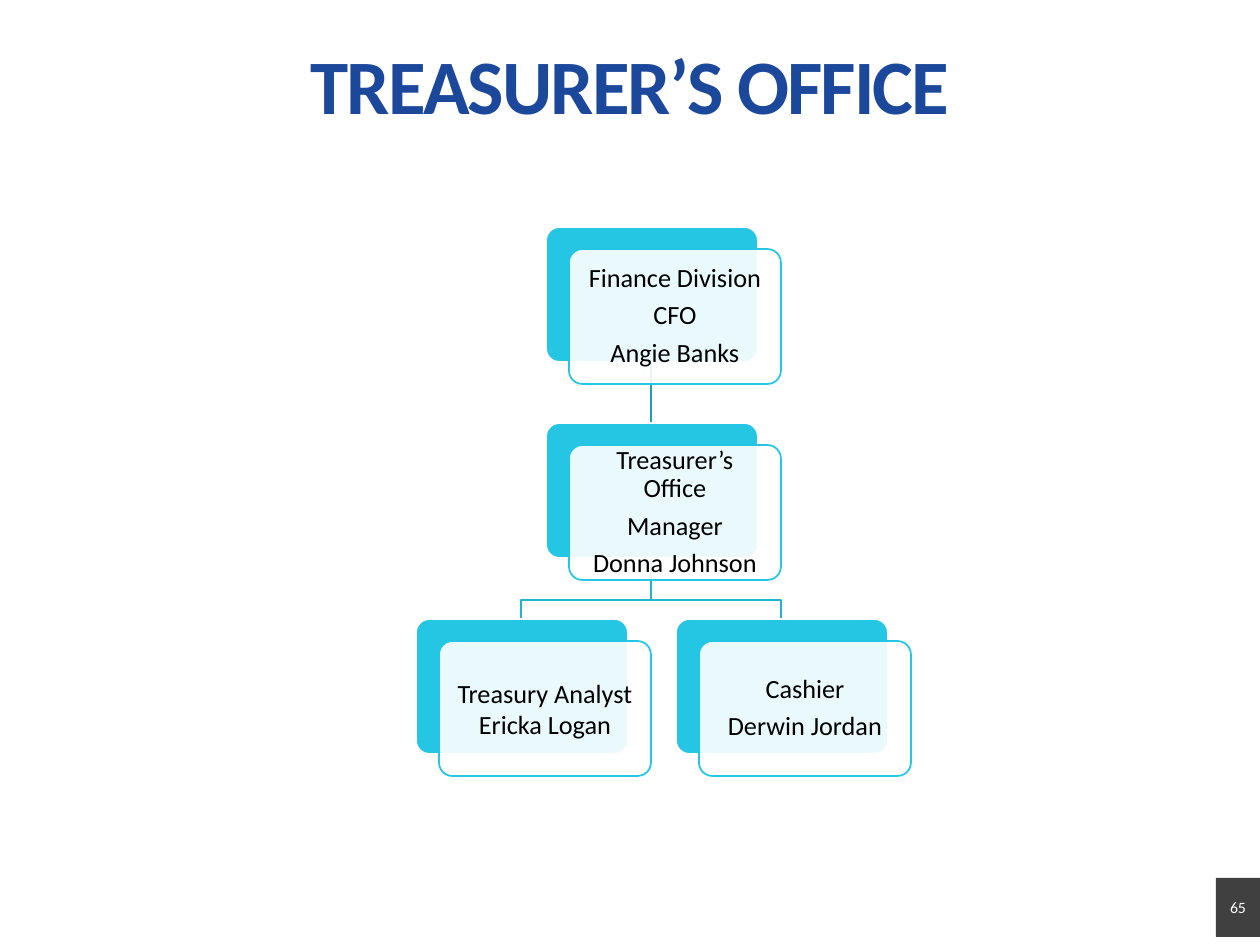
import pptx
import pptx.util
import pptx.dml.color
import pptx.enum.shapes
import pptx.enum.text
import pptx.oxml
import pptx.oxml.ns

SCALE = 914400 / 126
COLORS = {
    "title": "1B489B", "card": "25C6E3", "white": "FFFFFF", "text": "000000",
    "branch": "22B4CE", "stem": "1E9FB6", "badge": "404040",
}
FONT = "Calibri"
SHAPE = pptx.enum.shapes.MSO_SHAPE
ANCHOR = pptx.enum.text.MSO_ANCHOR
CENTER = pptx.enum.text.PP_ALIGN.CENTER

WIDTH, HEIGHT = 212, 135    # one card
DX, DY = 23, 22             # shift of the front panel
TOP, STEP = 227, 196        # first row and row pitch
MID, HALF = 546, 130        # left of the middle column, half a column pitch


def px(*values):
    return [pptx.util.Emu(round(value * SCALE)) for value in values]


def rgb(name):
    return pptx.dml.color.RGBColor.from_string(COLORS[name])


class Chart:
    """Style and current slide of the organisation chart."""

    def __init__(self, slide):
        self.slide = slide
        self.shapes = slide.shapes

    def text(self, frame, lines, size, color, pad, spread=None, after=0):
        frame.word_wrap = True
        frame.auto_size = pptx.enum.text.MSO_AUTO_SIZE.NONE
        frame.margin_left, frame.margin_top, frame.margin_right, frame.margin_bottom = px(*pad)
        for i, line in enumerate(lines):
            para = frame.add_paragraph() if i else frame.paragraphs[0]
            para.alignment = CENTER
            para.space_before = pptx.util.Pt(0)
            para.space_after = pptx.util.Pt(after)
            para.line_spacing = spread
            run = para.add_run()
            run.text = line
            run.font.name = FONT
            run.font.size = pptx.util.Pt(size)
            run.font.color.rgb = rgb(color)

    def title(self, text):
        title = self.shapes.title
        title.left, title.top, title.width, title.height = px(0, 43, 1260, 62)
        frame = title.text_frame
        frame.vertical_anchor = ANCHOR.TOP
        self.text(frame, [text], 44, "title", (9, 5, 9, 5), 0.9)
        font = frame.paragraphs[0].runs[0].font
        font.bold = True
        font._element.set("spc", "-110")

    def box(self, kind, place, fill, line=None):
        box = self.shapes.add_shape(kind, *px(*place))
        box.shadow.inherit = False
        box.fill.solid()
        box.fill.fore_color.rgb = rgb(fill)
        if line:
            box.line.color.rgb = rgb(line)
            box.line.width = pptx.util.Pt(1)
        else:
            box.line.fill.background()
        box.text_frame.vertical_anchor = ANCHOR.MIDDLE
        return box

    def card(self, x, y, lines, spread=0.9, after=5.25):
        """Solid back panel with a translucent front panel that holds the text."""
        back = self.box(SHAPE.ROUNDED_RECTANGLE, (x, y, WIDTH, HEIGHT), "card", "white")
        front = self.box(SHAPE.ROUNDED_RECTANGLE, (x + DX, y + DY, WIDTH, HEIGHT),
                         "white", "card")
        back.adjustments[0] = front.adjustments[0] = 0.1
        tint = front._element.spPr.find(pptx.oxml.ns.qn("a:solidFill"))[0]
        tint.append(pptx.oxml.parse_xml(
            '<a:alpha %s val="90000"/>' % pptx.oxml.ns.nsdecls("a")))
        self.text(front.text_frame, lines, 15, "text", (11, 11, 11, 11), spread, after)

    def stem(self, x, start, end):
        line = self.shapes.add_connector(
            pptx.enum.shapes.MSO_CONNECTOR.STRAIGHT, *px(x, start, x, end))
        line.line.color.rgb = rgb("stem")
        line.line.width = pptx.util.Pt(1)
        line._element.spPr.append(pptx.oxml.parse_xml(
            "<a:effectLst %s/>" % pptx.oxml.ns.nsdecls("a")))

    def branch(self, start, bend, end):
        """Line that goes down, across and down again."""
        (x, y), (far, low) = start, end
        route = self.shapes.build_freeform(*px(x, y))
        route.add_line_segments([px(x, bend), px(far, bend), px(far, low)], close=False)
        line = route.convert_to_shape()
        line.shadow.inherit = False
        line.fill.background()
        line.line.color.rgb = rgb("branch")
        line.line.width = pptx.util.Pt(1)

    def badge(self, text):
        box = self.box(SHAPE.RECTANGLE, (1216, 878, 44, 59), "badge")
        self.text(box.text_frame, [text], 9, "white", (0, 0, 0, 0))


def main():
    deck = pptx.Presentation()
    deck.slide_width, deck.slide_height = px(1260, 945)
    chart = Chart(deck.slides.add_slide(deck.slide_layouts[5]))
    chart.title("TREASURER’S OFFICE")

    rows = [TOP + STEP * i for i in range(3)]
    axis = MID + WIDTH // 2 - 1
    for side in (1, -1):
        chart.branch((axis, rows[1] + HEIGHT), 600, (axis + side * HALF, rows[2]))
    chart.stem(axis, rows[0] + HEIGHT, rows[1])

    chart.card(MID, rows[0], ["Finance Division", "CFO", "Angie Banks"])
    chart.card(MID, rows[1], ["Treasurer’s Office", "Manager", "Donna Johnson"])
    chart.card(MID - HALF, rows[2], ["Treasury Analyst", "Ericka Logan"], 1.0, 0)
    chart.card(MID + HALF, rows[2], ["Cashier", "Derwin Jordan"])
    chart.badge("65")
    deck.save("out.pptx")


if __name__ == "__main__":
    main()
